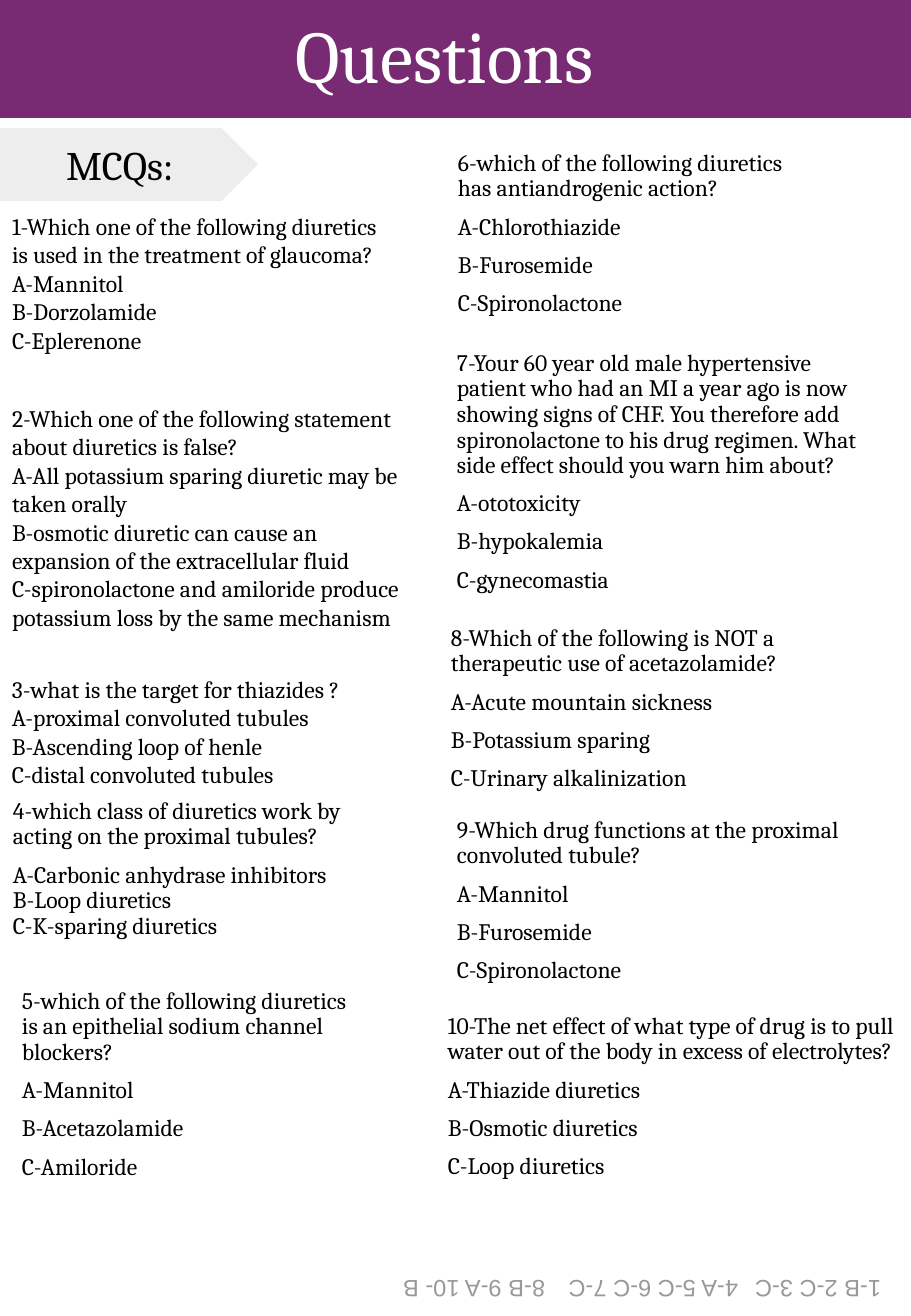
import pptx
import pptx.dml.color
import pptx.enum.shapes
import pptx.enum.text
import pptx.util

PURPLE = pptx.dml.color.RGBColor(0x78, 0x2A, 0x72)
PALE = pptx.dml.color.RGBColor(0xED, 0xED, 0xED)
GREY = pptx.dml.color.RGBColor(0x99, 0x99, 0x99)
BLACK = pptx.dml.color.RGBColor(0x00, 0x00, 0x00)
WHITE = pptx.dml.color.RGBColor(0xFF, 0xFF, 0xFF)

EMU_PER_PX = 7526
CENTER = pptx.enum.text.PP_ALIGN.CENTER
LEFT = pptx.enum.text.PP_ALIGN.LEFT
MIDDLE = pptx.enum.text.MSO_ANCHOR.MIDDLE
TOP = pptx.enum.text.MSO_ANCHOR.TOP

LOOSE = {"line_spacing": 0.9, "gaps": (7.5, 7.5, 7.5)}
LIST = {"line_spacing": 0.9, "gaps": (7.5, 0, 0)}
PLAIN = {"line_spacing": 1.0, "gaps": (0, 0, 0)}

QUESTIONS = [
    ((0, 200, 396, 205), PLAIN, [
        "1-Which one of the following diuretics is used in the treatment of glaucoma?",
        "A-Mannitol", "B-Dorzolamide", "C-Eplerenone"]),
    ((0, 392, 416, 310), PLAIN, [
        "2-Which one of the following statement about diuretics is false?",
        "A-All potassium sparing diuretic may be taken orally",
        "B-osmotic diuretic can cause an expansion of the extracellular fluid",
        "C-spironolactone and amiloride produce potassium loss by the same mechanism"]),
    ((0, 663, 386, 142), PLAIN, [
        "3-what is the target for thiazides ?",
        "A-proximal convoluted tubules", "B-Ascending loop of henle",
        "C-distal convoluted tubules"]),
    ((1, 787, 384, 205), LIST, [
        "4-which class of diuretics work by acting on the proximal tubules?",
        "A-Carbonic anhydrase inhibitors", "B-Loop diuretics", "C-K-sparing diuretics"]),
    ((10, 977, 367, 271), LOOSE, [
        "5-which of the following diuretics is an epithelial sodium channel blockers?",
        "A-Mannitol", "B-Acetazolamide", "C-Amiloride"]),
    ((446, 139, 384, 219), LOOSE, [
        "6-which of the following diuretics has antiandrogenic action?",
        "A-Chlorothiazide", "B-Furosemide", "C-Spironolactone"]),
    ((445, 339, 446, 323), LOOSE, [
        "7-Your 60 year old male hypertensive patient who had an MI a year ago is now "
        "showing signs of CHF. You therefore add spironolactone to his drug regimen. "
        "What side effect should you warn him about?",
        "A-ototoxicity", "B-hypokalemia", "C-gynecomastia"]),
    ((439, 614, 457, 205), LOOSE, [
        "8-Which of the following is NOT a therapeutic use of acetazolamide?",
        "A-Acute mountain sickness", "B-Potassium sparing", "C-Urinary alkalinization"]),
    ((445, 806, 477, 232), LOOSE, [
        "9-Which drug functions at the proximal convoluted tubule?",
        "A-Mannitol", "B-Furosemide", "C-Spironolactone"]),
    ((436, 1002, 492, 219), LOOSE, [
        "10-The net effect of what type of drug is to pull water out of the body "
        "in excess of electrolytes?",
        "A-Thiazide diuretics", "B-Osmotic diuretics", "C-Loop diuretics"]),
]

ANSWERS = [
    ((416, 1231, 477, 85), "1-B 2-C 3-C"),
    ((293, 1231, 457, 85), "4-A 5-C 6-C 7-C"),
    ((168, 1231, 389, 85), "8-B 9-A 10- B"),
]


def px(length):
    return pptx.util.Emu(length * EMU_PER_PX)


def apply(target, values):
    for name, value in values.items():
        setattr(target, name, value)


class QuizPage:
    heading = {"name": "Cambria", "size": pptx.util.Pt(44)}
    label = {"name": "Cambria", "size": pptx.util.Pt(24)}
    body = {"name": "Cambria", "size": pptx.util.Pt(14)}
    key = {"name": "Arial", "size": pptx.util.Pt(14)}

    def __init__(self, presentation):
        self.slide = presentation.slides.add_slide(presentation.slide_layouts[5])

    def fill_text(self, shape, lines, font, color, margins=(12, 12, 12, 12), anchor=TOP,
                  alignment=LEFT, line_spacing=1.0, gaps=()):
        frame = shape.text_frame
        left, top, right, bottom = map(px, margins)
        apply(frame, {
            "margin_left": left, "margin_top": top,
            "margin_right": right, "margin_bottom": bottom,
            "word_wrap": True, "vertical_anchor": anchor,
            "auto_size": pptx.enum.text.MSO_AUTO_SIZE.NONE})
        for index, line in enumerate(lines):
            paragraph = frame.add_paragraph() if index else frame.paragraphs[0]
            apply(paragraph, {
                "alignment": alignment, "line_spacing": line_spacing,
                "space_before": pptx.util.Pt(gaps[index - 1] if index else 0)})
            run = paragraph.add_run()
            run.text = line
            apply(run.font, font)
            run.font.color.rgb = color

    def title(self, box, text):
        shape = self.slide.shapes.title
        apply(shape, dict(zip(("left", "top", "width", "height"), map(px, box))))
        shape.fill.solid()
        shape.fill.fore_color.rgb = PURPLE
        self.fill_text(shape, [text], self.heading, WHITE, (12, 6, 34, 6),
                       MIDDLE, CENTER, 0.9)

    def tag(self, box, text):
        shape = self.slide.shapes.add_shape(
            pptx.enum.shapes.MSO_SHAPE.PENTAGON, *map(px, box))
        shape.shadow.inherit = False
        shape.fill.solid()
        shape.fill.fore_color.rgb = PALE
        shape.line.fill.background()
        self.fill_text(shape, [text], self.label, BLACK, (12, 6, 12, 6), MIDDLE, CENTER)

    def question(self, box, spacing, lines):
        shape = self.slide.shapes.add_textbox(*map(px, box))
        self.fill_text(shape, lines, self.body, BLACK, **spacing)

    def answer(self, box, text):
        shape = self.slide.shapes.add_textbox(*map(px, box))
        shape.rotation = 180
        self.fill_text(shape, [text], self.key, GREY)


def main():
    presentation = pptx.Presentation()
    apply(presentation, {"slide_width": px(911), "slide_height": px(1316)})
    page = QuizPage(presentation)
    page.title((0, 0, 911, 118), "Questions")
    page.tag((0, 128, 258, 73), "MCQs:")
    for box, spacing, lines in QUESTIONS:
        page.question(box, spacing, lines)
    for box, text in ANSWERS:
        page.answer(box, text)
    presentation.save("out.pptx")


if __name__ == "__main__":
    main()
